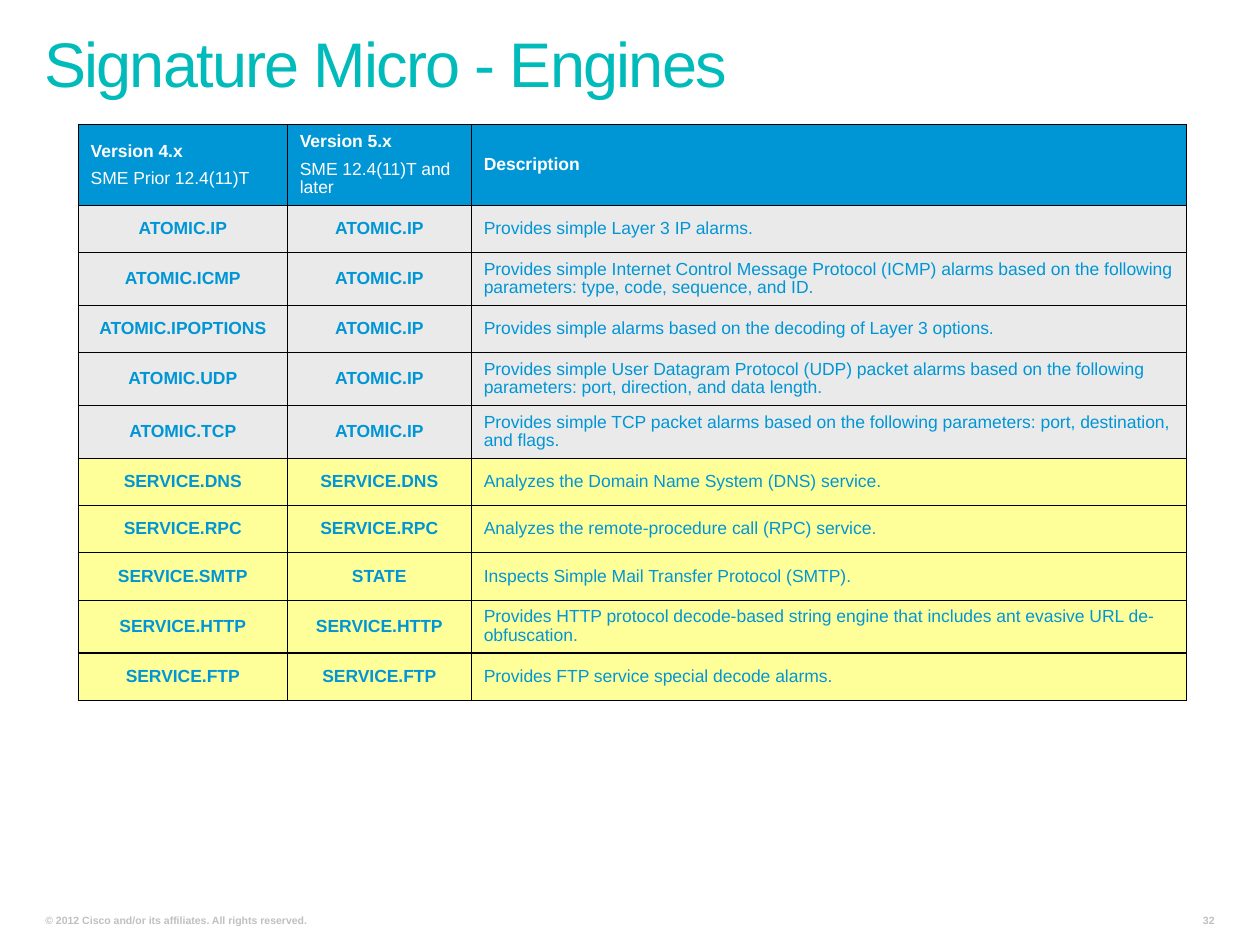
import pptx
import pptx.util
import pptx.dml.color
import pptx.enum.text
import pptx.oxml
import pptx.oxml.ns

Inches, Pt = pptx.util.Inches, pptx.util.Pt
ALIGN, ANCHOR = pptx.enum.text.PP_ALIGN, pptx.enum.text.MSO_ANCHOR
FIT = pptx.enum.text.MSO_AUTO_SIZE

COLORS = {"title": "01BBBB", "blue": "0096D6", "white": "FFFFFF",
          "atomic": "EAEAEA", "service": "FFFF99", "foot": "C0C0C0",
          "border": "000000"}
FONT = "Arial"
COLS = (1.66, 1.46, 5.68)
HEIGHT, HEAD, DOUBLE = 4.57, 0.64, 0.42  # whole table, header, two-line row
LONG = 90  # a description longer than this takes two lines

HEADS = (("Version 4.x", "SME Prior 12.4(11)T"),
         ("Version 5.x", "SME 12.4(11)T and later"),
         ("Description",))
ENGINES = {
    "atomic": (
        ("ATOMIC.IP", "ATOMIC.IP", "Provides simple Layer 3 IP alarms."),
        ("ATOMIC.ICMP", "ATOMIC.IP",
         "Provides simple Internet Control Message Protocol (ICMP) alarms "
         "based on the following parameters: type, code, sequence, and ID."),
        ("ATOMIC.IPOPTIONS", "ATOMIC.IP",
         "Provides simple alarms based on the decoding of Layer 3 options."),
        ("ATOMIC.UDP", "ATOMIC.IP",
         "Provides simple User Datagram Protocol (UDP) packet alarms based "
         "on the following parameters: port, direction, and data length."),
        ("ATOMIC.TCP", "ATOMIC.IP",
         "Provides simple TCP packet alarms based on the following "
         "parameters: port, destination, and flags."),
    ),
    "service": (
        ("SERVICE.DNS", "SERVICE.DNS",
         "Analyzes the Domain Name System (DNS) service."),
        ("SERVICE.RPC", "SERVICE.RPC",
         "Analyzes the remote-procedure call (RPC) service."),
        ("SERVICE.SMTP", "STATE",
         "Inspects Simple Mail Transfer Protocol (SMTP)."),
        ("SERVICE.HTTP", "SERVICE.HTTP",
         "Provides HTTP protocol decode-based string engine that includes "
         "ant evasive URL de-obfuscation."),
        ("SERVICE.FTP", "SERVICE.FTP",
         "Provides FTP service special decode alarms."),
    ),
}


def paint(name):
    return pptx.dml.color.RGBColor.from_string(COLORS[name])


def style(para, size, color, bold=False, align=ALIGN.LEFT, lines=None):
    para.alignment = align
    if lines:
        para.line_spacing = lines
    font = para.font
    font.name, font.size, font.bold = FONT, Pt(size), bold
    font.color.rgb = paint(color)


def add_title(slide, text):
    title = slide.shapes.title
    title.left, title.top = Inches(0.25), Inches(0.17)
    title.width, title.height = Inches(9.39), Inches(0.67)
    frame = title.text_frame
    frame.text = text
    frame.auto_size = FIT.NONE
    frame.vertical_anchor = ANCHOR.BOTTOM
    style(frame.paragraphs[0], 36, "title", lines=0.8)
    frame.paragraphs[0].runs[0].font._element.set("spc", "-100")


def add_foot(slide, text, left, width, align):
    box = slide.shapes.add_textbox(Inches(left), Inches(7.2),
                                   Inches(width), Inches(0.19))
    frame = box.text_frame
    frame.text = text
    frame.word_wrap = align == ALIGN.LEFT
    frame.vertical_anchor = ANCHOR.BOTTOM
    frame.margin_top = frame.margin_bottom = Inches(0.04)
    frame.margin_left = frame.margin_right = Inches(0.09)
    style(frame.paragraphs[0], 6, "foot", True, align)


def add_border(cell):
    props = cell._tc.get_or_add_tcPr()
    for side in "LRTB":
        props.append(pptx.oxml.parse_xml(
            f'<a:ln{side} {pptx.oxml.ns.nsdecls("a")} w="{Pt(0.75)}">'
            f'<a:solidFill><a:srgbClr val="{COLORS["border"]}"/></a:solidFill>'
            f'</a:ln{side}>'))


def fill_cell(cell, lines, fill, color, bolds, align):
    add_border(cell)
    cell.fill.solid()
    cell.fill.fore_color.rgb = paint(fill)
    cell.vertical_anchor = ANCHOR.MIDDLE
    cell.text = "\n".join(lines)
    for i, (para, bold) in enumerate(zip(cell.text_frame.paragraphs, bolds)):
        style(para, 10, color, bold, align, 0.95)
        if i:
            para.space_before = Pt(5)


def add_engines(slide):
    rows = [(kind, row) for kind, group in ENGINES.items() for row in group]
    tall = [len(row[-1]) > LONG for _, row in rows]
    single = (HEIGHT - HEAD - DOUBLE * sum(tall)) / tall.count(False)
    sizes = [HEAD] + [DOUBLE if two else single for two in tall]
    table = slide.shapes.add_table(len(sizes), len(COLS), Inches(0.62),
                                   Inches(0.99), Inches(sum(COLS)),
                                   Inches(HEIGHT)).table
    for col, width in zip(table.columns, COLS):
        col.width = Inches(width)
    for row, size in zip(table.rows, sizes):
        row.height = Inches(size)
    for c, lines in enumerate(HEADS):
        fill_cell(table.cell(0, c), lines, "blue", "white",
                  (True, False), ALIGN.LEFT)
    for r, (kind, row) in enumerate(rows, 1):
        for c, text in enumerate(row):
            name = c < 2
            fill_cell(table.cell(r, c), [text], kind, "blue", [name],
                      ALIGN.CENTER if name else ALIGN.LEFT)


def main():
    deck = pptx.Presentation()
    deck.slide_width, deck.slide_height = Inches(10), Inches(7.5)
    slide = deck.slides.add_slide(deck.slide_layouts[5])
    add_title(slide, "Signature Micro - Engines")
    add_engines(slide)
    add_foot(slide, "© 2012 Cisco and/or its affiliates. All rights reserved.",
             0.27, 3.74, ALIGN.LEFT)
    add_foot(slide, "32", 9.45, 0.28, ALIGN.RIGHT)
    deck.save("out.pptx")


if __name__ == "__main__":
    main()
